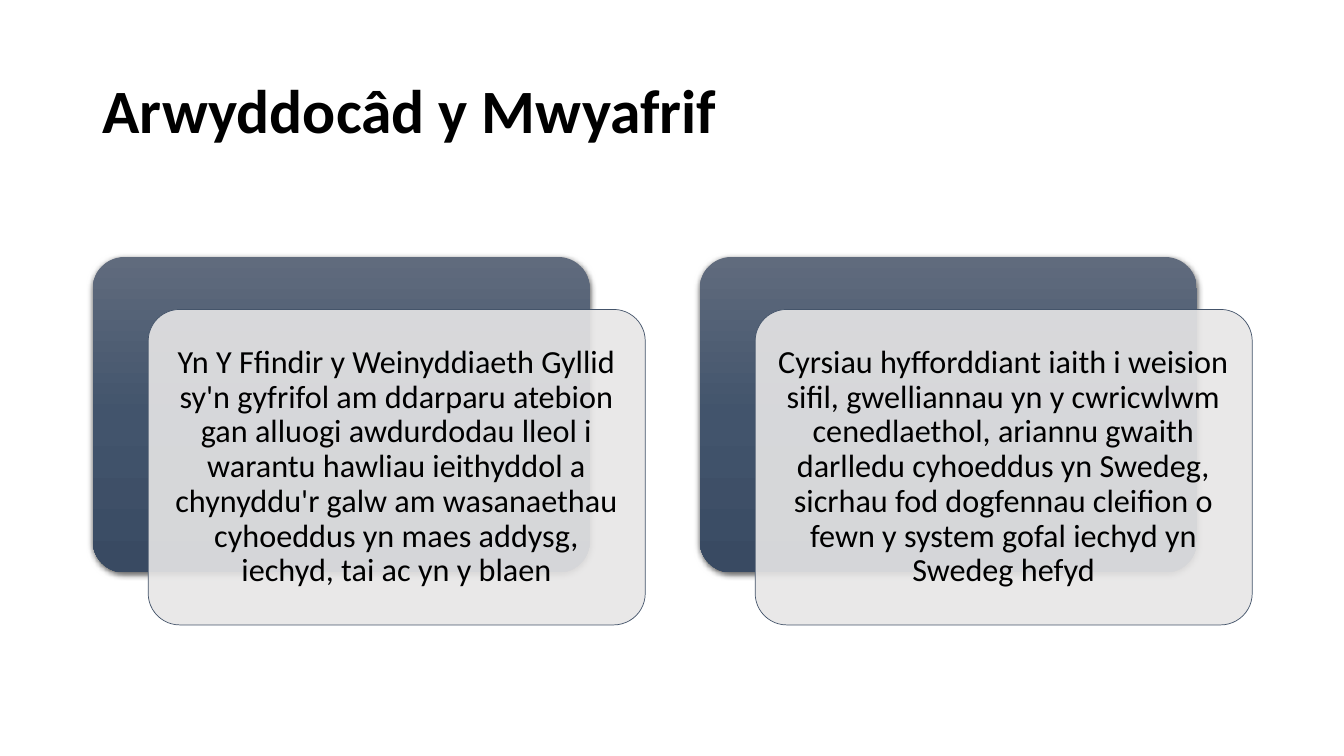
import copy

import pptx
import pptx.util
from lxml import etree
from pptx.dml.color import RGBColor
from pptx.enum.shapes import MSO_SHAPE
from pptx.enum.text import MSO_ANCHOR, PP_ALIGN
from pptx.oxml.ns import qn
from pptx.util import Inches

BLACK = RGBColor(0x00, 0x00, 0x00)
CARD_FILL = RGBColor(0xE7, 0xE6, 0xE6)
CARD_LINE = RGBColor(0x44, 0x54, 0x6A)
PANEL_GRADIENT = [
    (0, RGBColor(0x60, 0x6B, 0x7D)),
    (0.5, RGBColor(0x42, 0x54, 0x6C)),
    (1, RGBColor(0x39, 0x4A, 0x62)),
]

FIRST_LEFT, PANEL_TOP = 0.92, 2.55
BOX_WIDTH, BOX_HEIGHT = 4.93, 3.13
COLUMN_STEP = 6.02
CARD_SHIFT_X, CARD_SHIFT_Y = 0.55, 0.52

CARD_TEXTS = [
    "Yn Y Ffindir y Weinyddiaeth Gyllid sy'n gyfrifol am ddarparu atebion "
    "gan alluogi awdurdodau lleol i warantu hawliau ieithyddol a "
    "chynyddu'r galw am wasanaethau cyhoeddus yn maes addysg, iechyd, "
    "tai ac yn y blaen",
    "Cyrsiau hyfforddiant iaith i weision sifil, gwelliannau yn y cwricwlwm "
    "cenedlaethol, ariannu gwaith darlledu cyhoeddus yn Swedeg, sicrhau fod "
    "dogfennau cleifion o fewn y system gofal iechyd yn Swedeg hefyd",
]


def write_text(shape, text, alignment, font_format):
    """Fill a shape with one wrapped, vertically centred paragraph."""
    frame = shape.text_frame
    frame.word_wrap = True
    frame.vertical_anchor = MSO_ANCHOR.MIDDLE
    paragraph = frame.paragraphs[0]
    paragraph.alignment = alignment
    paragraph.line_spacing = 0.9
    run = paragraph.add_run()
    run.text = text
    run.font.color.rgb = BLACK
    for name, value in font_format.items():
        setattr(run.font, name, value)


def add_rounded_box(left, top):
    box = slide.shapes.add_shape(
        MSO_SHAPE.ROUNDED_RECTANGLE,
        Inches(left), Inches(top), Inches(BOX_WIDTH), Inches(BOX_HEIGHT))
    box.adjustments[0] = 0.1
    box.shadow.inherit = False
    return box


presentation = pptx.Presentation()
presentation.slide_width = Inches(13.33)
presentation.slide_height = Inches(7.5)
slide = presentation.slides.add_slide(presentation.slide_layouts[6])

title = slide.shapes.add_textbox(
    Inches(FIRST_LEFT), Inches(0.4), Inches(11.5), Inches(1.45))
write_text(title, "Arwyddocâd y Mwyafrif", PP_ALIGN.LEFT,
           {"name": "Calibri", "size": pptx.util.Pt(44), "bold": True})

for column, card_text in enumerate(CARD_TEXTS):
    left = FIRST_LEFT + column * COLUMN_STEP

    # Dark panel with a three-stop gradient and a soft shadow below
    panel = add_rounded_box(left, PANEL_TOP)
    panel.line.fill.background()
    panel.fill.gradient()
    panel.fill.gradient_angle = 270
    properties = panel._element.spPr
    stop_list = properties.find(qn("a:gradFill")).find(qn("a:gsLst"))
    stop_list.insert(1, copy.deepcopy(stop_list[0]))
    for stop, (position, color) in zip(panel.fill.gradient_stops, PANEL_GRADIENT):
        stop.position = position
        stop.color.rgb = color
    shadow = etree.SubElement(
        properties.find(qn("a:effectLst")), qn("a:outerShdw"),
        blurRad=str(pptx.util.Pt(4.5)), dist=str(pptx.util.Pt(1.5)),
        dir="5400000", algn="ctr", rotWithShape="0")
    shadow_color = etree.SubElement(shadow, qn("a:srgbClr"), val=str(BLACK))
    etree.SubElement(shadow_color, qn("a:alpha"), val="63000")

    # Translucent text card, shifted down and right
    card = add_rounded_box(left + CARD_SHIFT_X, PANEL_TOP + CARD_SHIFT_Y)
    card.fill.solid()
    card.fill.fore_color.rgb = CARD_FILL
    card_color = card._element.spPr.find(qn("a:solidFill"))[0]
    etree.SubElement(card_color, qn("a:alpha"), val="90000")
    card.line.color.rgb = CARD_LINE
    card.line.width = pptx.util.Pt(0.5)
    for side in ("left", "top", "right", "bottom"):
        setattr(card.text_frame, f"margin_{side}", Inches(0.1))
    write_text(card, card_text, PP_ALIGN.CENTER,
               {"name": "Calibri", "size": pptx.util.Pt(23)})

presentation.save("out.pptx")
